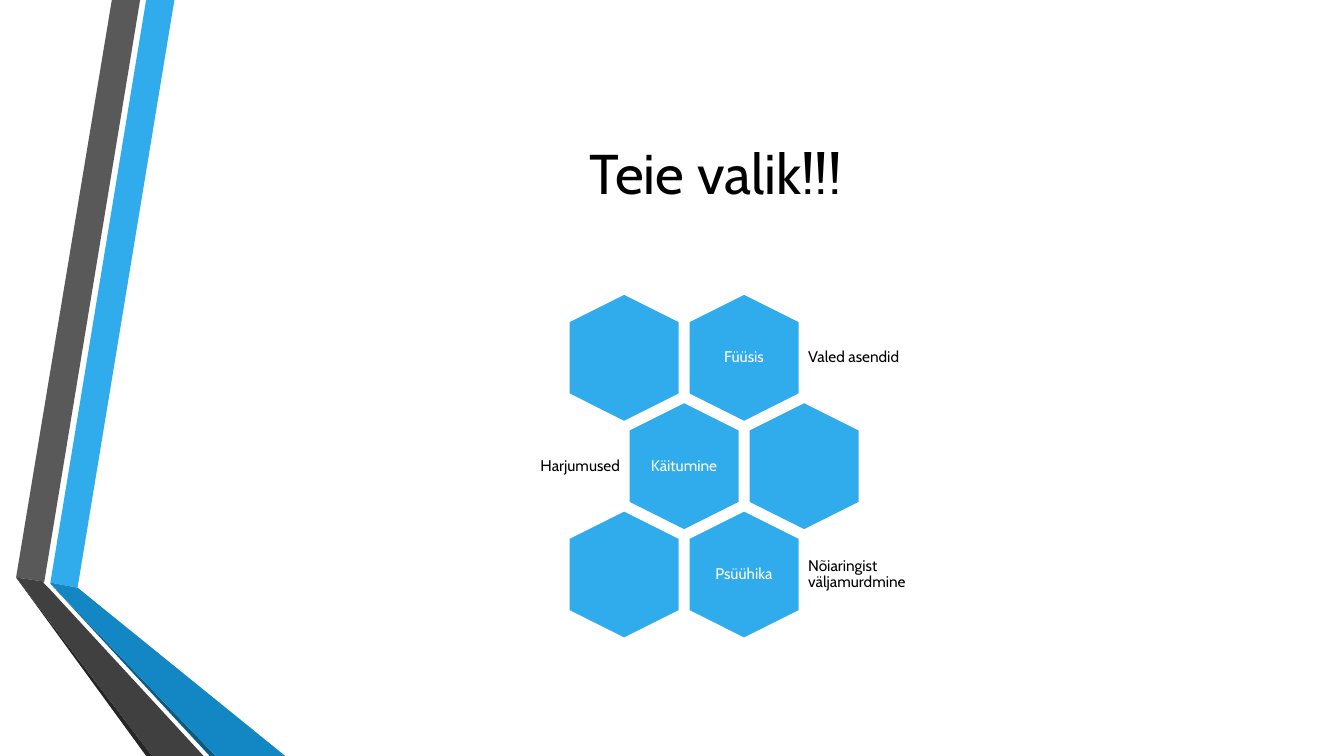
from pptx import Presentation
from pptx.dml.color import RGBColor
from pptx.enum.shapes import MSO_SHAPE
from pptx.enum.text import MSO_ANCHOR, PP_ALIGN
from pptx.util import Inches, Pt

COLUMNS, ROWS = 13.33, 7.5
BLUE, WHITE, BLACK = "30ACEC", "FFFFFF", "000000"

RIBBONS = [
    (BLUE, [(0.5, 5.78), (0.77, 5.83), (1.73, 0), (1.45, 0)]),
    ("595959", [(1.39, 0), (1.11, 0), (0.16, 5.73), (0.44, 5.77)]),
    ("262626", [(0.16, 5.73), (1.45, 7.5), (1.51, 7.5)]),
    ("0C5A82", [(0.5, 5.79), (2.08, 7.5), (2.14, 7.5)]),
    ("1287C3", [(0.5, 5.79), (2.14, 7.5), (2.83, 7.5), (0.77, 5.83), (0.5, 5.78)]),
    ("404040", [(2.02, 7.5), (0.48, 5.83), (0.43, 5.78), (0.44, 5.77),
                (0.16, 5.73), (1.51, 7.5)]),
]

HONEYCOMB = [
    (0, 2, "Füüsis", "Valed asendid", 1),
    (0, 0, "", "", 0),
    (1, 1, "Käitumine", "Harjumused", -1),
    (1, 3, "", "", 0),
    (2, 2, "Psüühika", "Nõiaringist väljamurdmine", 1),
    (2, 0, "", "", 0),
]
FIRST_X, FIRST_Y = 6.19, 3.55
HALF_STEP, ROW_STEP = 1.19 / 2, 2.15 / 2
LABEL_OFFSET = 1.29


def color(hex_value):
    return RGBColor.from_string(hex_value)


class SlideBuilder:
    font = "Cabin"

    def __init__(self, deck):
        self.page = deck.slides.add_slide(deck.slide_layouts[6])
        self.column = deck.slide_width / COLUMNS
        self.row = deck.slide_height / ROWS

    def point(self, x, y):
        return round(x * self.column), round(y * self.row)

    def place(self, center_x, center_y, width, height):
        corner = self.point(center_x - width / 2, center_y - height / 2)
        return corner + self.point(width, height)

    def paint(self, shape, fill):
        shape.shadow.inherit = False
        shape.fill.solid()
        shape.fill.fore_color.rgb = color(fill)

    def ribbon(self, fill, corners):
        first, *others = [self.point(*corner) for corner in corners]
        builder = self.page.shapes.build_freeform(*first)
        builder.add_line_segments(others, close=True)
        shape = builder.convert_to_shape()
        self.paint(shape, fill)
        shape.line.fill.background()

    def hexagon(self, center_x, center_y):
        shape = self.page.shapes.add_shape(
            MSO_SHAPE.HEXAGON, *self.place(center_x, center_y, 1.27, 1.1))
        shape.rotation = 90
        shape.adjustments[0] = 0.25
        self.paint(shape, BLUE)
        shape.line.color.rgb = color(WHITE)
        shape.line.width = Pt(1.25)

    def text(self, words, center_x, center_y, width, height, size=11,
             fill=BLACK, align=PP_ALIGN.CENTER, spacing=0.9):
        box = self.page.shapes.add_textbox(
            *self.place(center_x, center_y, width, height))
        frame_format = {"word_wrap": True, "vertical_anchor": MSO_ANCHOR.MIDDLE}
        for side in ("left", "right", "top", "bottom"):
            frame_format[f"margin_{side}"] = Inches(0.05)
        for name, value in frame_format.items():
            setattr(box.text_frame, name, value)
        para = box.text_frame.paragraphs[0]
        for name, value in {"alignment": align, "line_spacing": spacing}.items():
            setattr(para, name, value)
        span = para.add_run()
        span.text = words
        for name, value in {"name": self.font, "size": Pt(size)}.items():
            setattr(span.font, name, value)
        span.font.color.rgb = color(fill)


def main():
    deck = Presentation()
    deck.slide_width, deck.slide_height = Inches(COLUMNS), Inches(ROWS)
    slide = SlideBuilder(deck)

    for fill, corners in RIBBONS:
        slide.ribbon(fill, corners)

    slide.text("Teie valik!!!", 7.1, 1.71, 10.96, 1.92, size=40, spacing=1.0)

    for row, half_column, topic, label, side in HONEYCOMB:
        center_x = FIRST_X + half_column * HALF_STEP
        center_y = FIRST_Y + row * ROW_STEP
        slide.hexagon(center_x, center_y)
        if topic:
            slide.text(topic, center_x, center_y, 0.76, 0.87, fill=WHITE)
            align = PP_ALIGN.LEFT if side > 0 else PP_ALIGN.RIGHT
            slide.text(label, center_x + side * LABEL_OFFSET, center_y,
                       1.41, 0.76, align=align)

    deck.save("out.pptx")


if __name__ == "__main__":
    main()
